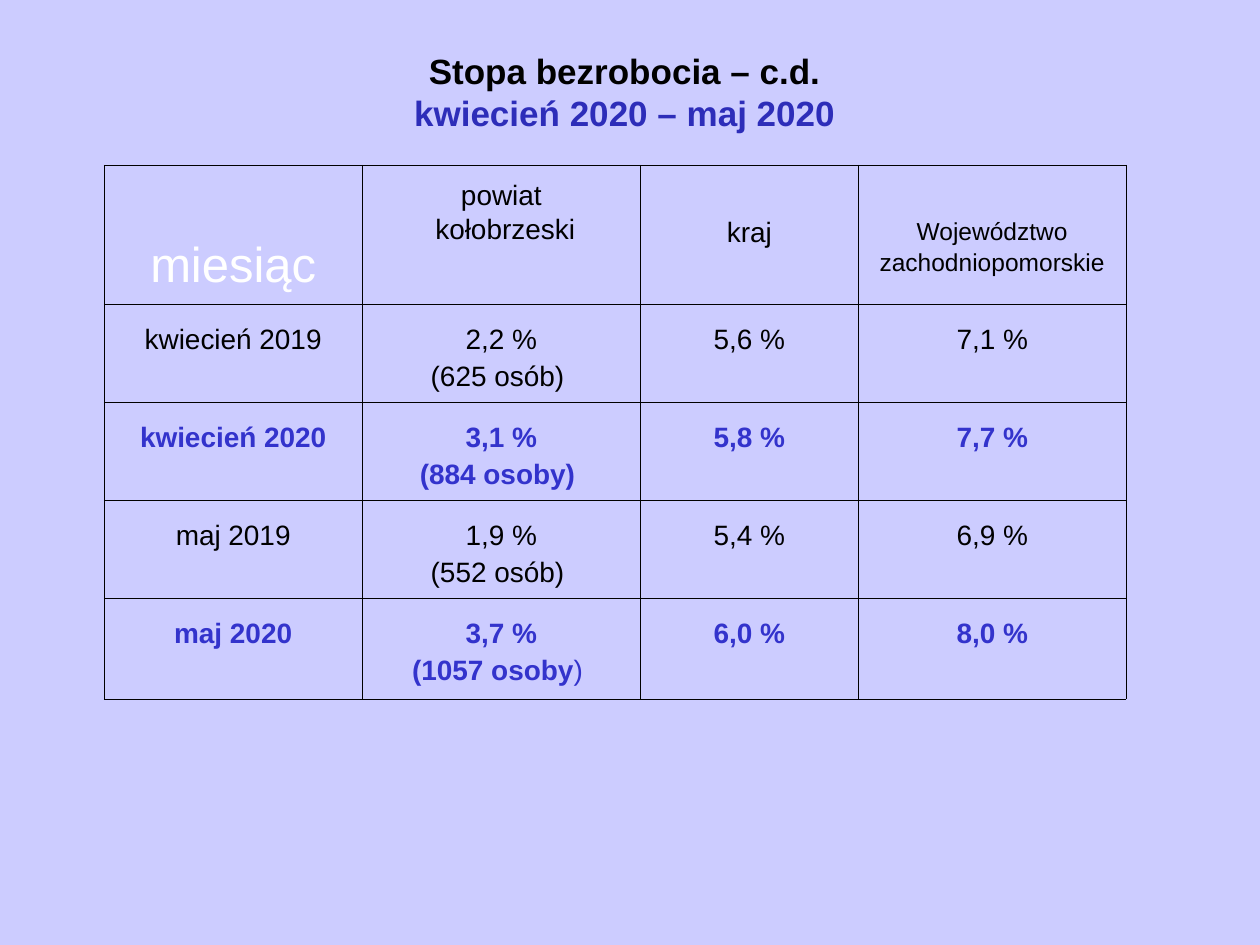
from lxml import etree
from pptx import Presentation
from pptx.dml.color import RGBColor
from pptx.enum.text import MSO_ANCHOR as Anchor, PP_ALIGN as Align
from pptx.oxml.ns import qn
from pptx.util import Pt

COLORS = {
    "background": "CCCCFF",
    "text": "000000",
    "period": "2D2DB9",
    "highlight": "3333CC",
    "month": "FFFFFF",
    "border": "000000",
}
FONT = "Arial"
COLUMN_WIDTHS = [147.5, 159, 124.5, 153]
ROW_HEIGHTS = [77.8, 53.7, 54.3, 54.9, 57.7]
OUTER_LINE, INNER_LINE = 0.23, 0.11

# heading lines, format, top margin
HEADINGS = [
    (["miesiąc"], {"size": 28, "color": "month"}, 42),
    (["powiat", " kołobrzeski"], {"spacing": 0.81, "before": 5}, 11.5),
    (["kraj"], {"spacing": 0.81, "before": 5}, 33),
    (["Województwo", "zachodniopomorskie"],
     {"size": 14, "spacing": 0.81, "before": 5}, 33),
]
# month, district rate, people, country rate, voivodeship rate
RATES = [
    ("kwiecień 2019", "2,2 %", "(625 osób) ", "5,6 %", "7,1 %"),
    ("kwiecień 2020", "3,1 %", "(884 osoby) ", "5,8 %", "7,7 %"),
    ("maj 2019", "1,9 %", "(552 osób) ", "5,4 %", "6,9 %"),
    ("maj 2020", "3,7 %", "(1057 osoby) ", "6,0 %", "8,0 %"),
]


def rgb(name):
    return RGBColor.from_string(COLORS[name])


def write(paragraph, text, size=16, color="text", bold=False, spacing=1.0, before=0):
    """Add a centred run to the paragraph."""
    paragraph.alignment = Align.CENTER
    paragraph.line_spacing = spacing
    paragraph.space_before = Pt(before)
    run = paragraph.add_run()
    run.text = text
    run.font.name = FONT
    run.font.size = Pt(size)
    run.font.bold = bold
    run.font.color.rgb = rgb(color)


def write_lines(frame, lines, **style):
    for index, line in enumerate(lines):
        paragraph = frame.add_paragraph() if index else frame.paragraphs[0]
        write(paragraph, line, **style)


def add_title(slide, left, top, width, height):
    frame = slide.shapes.add_textbox(Pt(left), Pt(top), Pt(width), Pt(height)).text_frame
    frame.word_wrap = True
    frame.vertical_anchor = Anchor.MIDDLE
    write(frame.paragraphs[0], "Stopa bezrobocia – c.d. ", size=20, bold=True)
    write(frame.add_paragraph(), "kwiecień 2020 – maj 2020 ",
          size=20, color="period", bold=True)


def set_borders(cell, widths):
    """Draw the left, right, top and bottom lines, in that order."""
    properties = cell._tc.get_or_add_tcPr()
    for index, (side, width) in enumerate(zip("LRTB", widths)):
        line = etree.Element(qn(f"a:ln{side}"), w=str(int(Pt(width))))
        fill = etree.SubElement(line, qn("a:solidFill"))
        etree.SubElement(fill, qn("a:srgbClr"), val=COLORS["border"])
        properties.insert(index, line)


def format_cell(cell, row, column):
    cell.fill.background()
    last_column = len(COLUMN_WIDTHS) - 1
    outer = (column == 0, column == last_column, row == 0, False)
    set_borders(cell, [OUTER_LINE if edge else INNER_LINE for edge in outer])


def add_rates_table(slide, left, top, width, height):
    table = slide.shapes.add_table(
        len(ROW_HEIGHTS), len(COLUMN_WIDTHS),
        Pt(left), Pt(top), Pt(width), Pt(height)).table
    table.first_row = table.horz_banding = False
    for column, column_width in zip(table.columns, COLUMN_WIDTHS):
        column.width = Pt(column_width)
    for row, row_height in zip(table.rows, ROW_HEIGHTS):
        row.height = Pt(row_height)

    for column, (lines, style, margin) in enumerate(HEADINGS):
        cell = table.cell(0, column)
        format_cell(cell, 0, column)
        cell.margin_top = Pt(margin)
        write_lines(cell.text_frame, lines, **style)

    for row, (month, district, people, country, voivodeship) in enumerate(RATES, 1):
        current = month.endswith("2020")
        style = {"color": "highlight" if current else "text",
                 "bold": current, "spacing": 0.81, "before": 7}
        # the closing bracket of the last row is not bold
        last = row == len(RATES)
        people, bracket = (people[:-2], people[-2:]) if last else (people, "")
        for column, lines in enumerate(
                ([month], [district, people], [country], [voivodeship])):
            cell = table.cell(row, column)
            format_cell(cell, row, column)
            cell.margin_top = Pt(14.4)
            write_lines(cell.text_frame, lines, **style)
        if bracket:
            write(table.cell(row, 1).text_frame.paragraphs[-1], bracket,
                  **{**style, "bold": False})


def main():
    presentation = Presentation()
    presentation.slide_width, presentation.slide_height = Pt(720), Pt(540)
    slide = presentation.slides.add_slide(presentation.slide_layouts[6])
    slide.background.fill.solid()
    slide.background.fill.fore_color.rgb = rgb("background")
    add_title(slide, 36, 10, 647.5, 84.5)
    add_rates_table(slide, 59.5, 94.3, sum(COLUMN_WIDTHS), sum(ROW_HEIGHTS))
    presentation.save("out.pptx")


if __name__ == "__main__":
    main()
